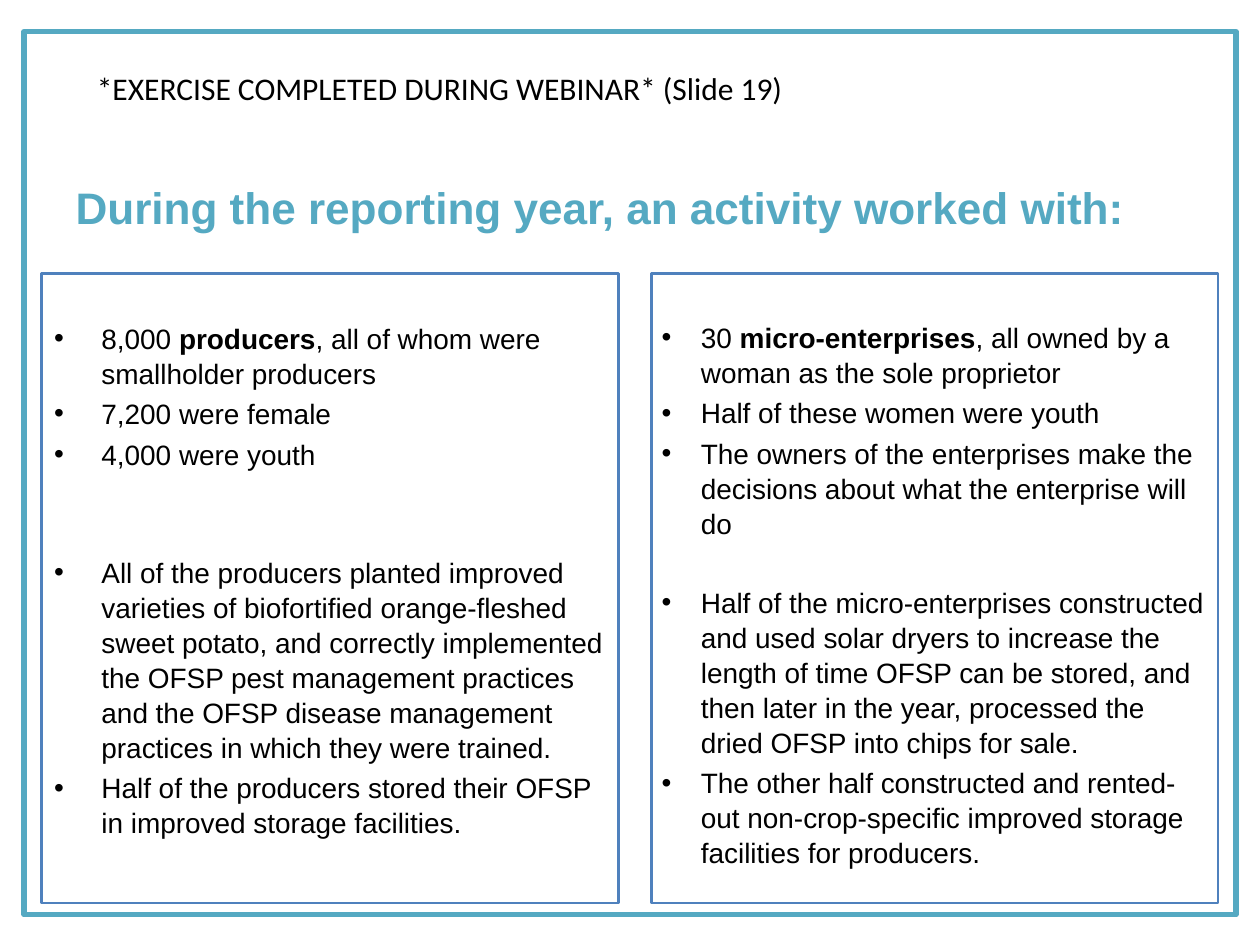
from dataclasses import dataclass

from lxml.etree import SubElement
from pptx import Presentation
from pptx.dml.color import RGBColor
from pptx.enum.shapes import MSO_SHAPE
from pptx.enum.text import MSO_ANCHOR, MSO_AUTO_SIZE, PP_ALIGN
from pptx.oxml.ns import qn
from pptx.util import Pt

TEAL = "55A9C2"
BLUE = "4F81BD"
BLACK = "000000"
BULLET_GAP = 3.2


@dataclass
class Bullet:
    text: str
    bold: str = ""
    rest: str = ""
    space_before: float = BULLET_GAP


@dataclass
class Panel:
    left: float
    width: float
    indent: float
    side_margin: float
    top_margin: float
    bullets: list[Bullet]


PANELS = [
    Panel(23.76, 329.76, 27, 7.2, 26.5, [
        Bullet("8,000 ", "producers", ", all of whom were smallholder producers", 0),
        Bullet("7,200 were female"),
        Bullet("4,000 were youth"),
        Bullet(
            "All of the producers planted improved varieties of biofortified "
            "orange-fleshed sweet potato, and correctly implemented the OFSP pest "
            "management practices and the OFSP disease management practices in "
            "which they were trained.",
            space_before=47.7,
        ),
        Bullet("Half of the producers stored their OFSP in improved storage facilities."),
    ]),
    Panel(372.24, 324, 22.5, 5.76, 26, [
        Bullet("30 ", "micro-enterprises", ", all owned by a woman as the sole proprietor", 0),
        Bullet("Half of these women were youth"),
        Bullet(
            "The owners of the enterprises make the decisions about what the "
            "enterprise will do"
        ),
        Bullet(
            "Half of the micro-enterprises constructed and used solar dryers to "
            "increase the length of time OFSP can be stored, and then later in the "
            "year, processed the dried OFSP into chips for sale.",
            space_before=25.4,
        ),
        Bullet(
            "The other half constructed and rented-out non-crop-specific improved "
            "storage facilities for producers."
        ),
    ]),
]


def color(value: str) -> RGBColor:
    return RGBColor.from_string(value)


def place(shape, left: float, top: float, width: float, height: float) -> None:
    shape.left, shape.top = Pt(left), Pt(top)
    shape.width, shape.height = Pt(width), Pt(height)


def outline(shape, line_color: str, width: float) -> None:
    shape.fill.background()
    shape.line.color.rgb = color(line_color)
    shape.line.width = Pt(width)


def style(paragraph, name: str, size: float, text_color: str, bold: bool = False) -> None:
    font = paragraph.font
    font.name, font.size, font.bold = name, Pt(size), bold
    font.color.rgb = color(text_color)


def write_bullet(paragraph, bullet: Bullet, indent: float) -> None:
    properties = paragraph._p.get_or_add_pPr()
    properties.set("marL", str(Pt(indent)))
    properties.set("indent", str(-Pt(indent)))
    SubElement(properties, qn("a:buFont")).set("typeface", "Arial")
    SubElement(properties, qn("a:buChar")).set("char", "•")
    paragraph.space_before = Pt(bullet.space_before)
    paragraph.line_spacing = 1.04
    style(paragraph, "Arial", 16, BLACK)
    paragraph.add_run().text = bullet.text
    if bullet.bold:
        bold_run = paragraph.add_run()
        bold_run.text = bullet.bold
        bold_run.font.bold = True
        paragraph.add_run().text = bullet.rest


def fill_panel(shape, panel: Panel) -> None:
    place(shape, panel.left, 156.24, panel.width, 360)
    outline(shape, BLUE, 1.25)
    frame = shape.text_frame
    frame.auto_size = MSO_AUTO_SIZE.NONE
    frame.word_wrap = True
    frame.vertical_anchor = MSO_ANCHOR.TOP
    frame.margin_left = frame.margin_right = Pt(panel.side_margin)
    frame.margin_top = Pt(panel.top_margin)
    for index, bullet in enumerate(panel.bullets):
        paragraph = frame.add_paragraph() if index else frame.paragraphs[0]
        write_bullet(paragraph, bullet, panel.indent)


def main() -> None:
    presentation = Presentation()
    presentation.slide_width, presentation.slide_height = Pt(720), Pt(540)
    slide = presentation.slides.add_slide(presentation.slide_layouts[3])

    title = slide.shapes.title
    place(title, 36, 95.76, 648, 44.64)
    title.text_frame.text = "During the reporting year, an activity worked with:"
    title.text_frame.auto_size = MSO_AUTO_SIZE.NONE
    title.text_frame.vertical_anchor = MSO_ANCHOR.MIDDLE
    heading = title.text_frame.paragraphs[0]
    heading.alignment = PP_ALIGN.LEFT
    style(heading, "Arial", 25.2, TEAL, bold=True)

    border = slide.shapes.add_shape(
        MSO_SHAPE.RECTANGLE, Pt(13.68), Pt(18), Pt(692.64), Pt(504.72)
    )
    border.shadow.inherit = False
    outline(border, TEAL, 3)
    title.element.addprevious(border.element)

    for index, panel in enumerate(PANELS, start=1):
        fill_panel(slide.placeholders[index], panel)

    note = slide.shapes.add_textbox(Pt(48.24), Pt(36), Pt(432), Pt(29.08))
    note.text_frame.word_wrap = True
    note.text_frame.text = "*EXERCISE COMPLETED DURING WEBINAR* (Slide 19)"
    style(note.text_frame.paragraphs[0], "Calibri", 18, BLACK)

    presentation.save("out.pptx")


if __name__ == "__main__":
    main()
